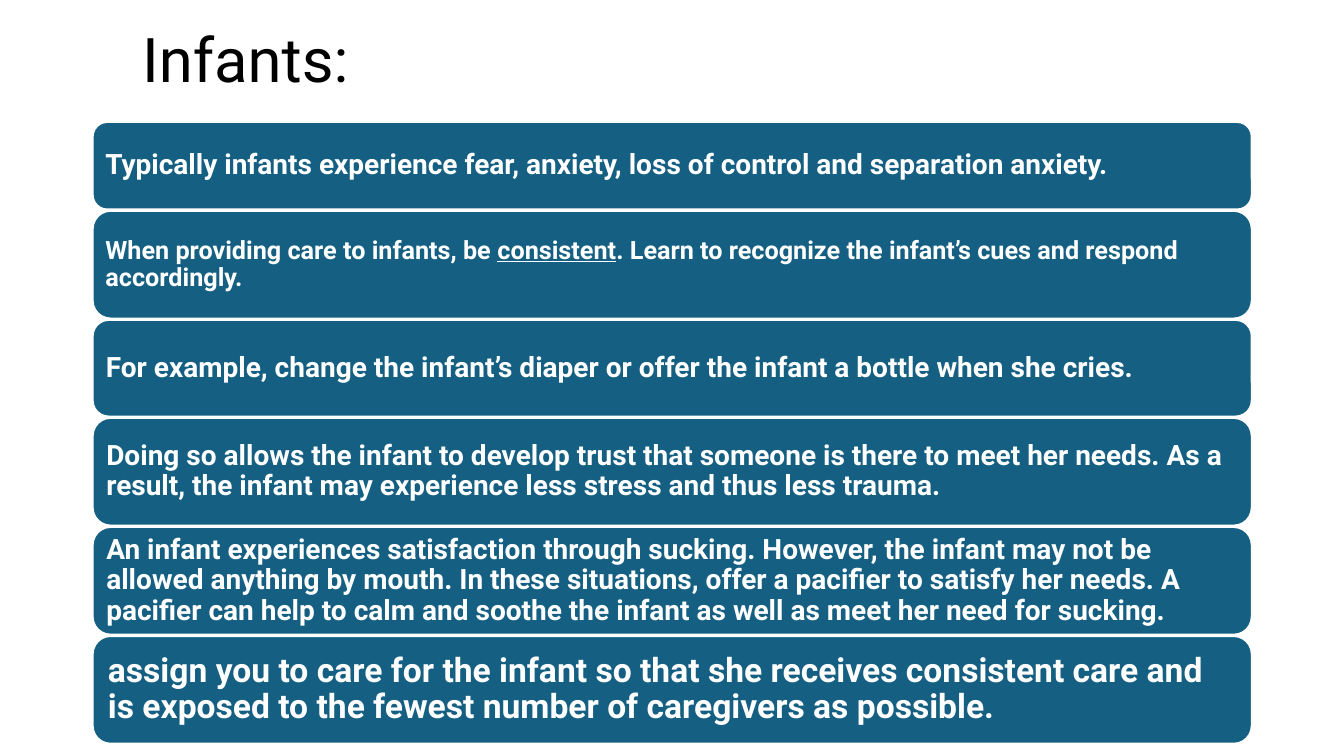
"""Build a slide on caring for infants: a title above a stack of rounded bars."""
from pptx import Presentation, util as u
from pptx.dml.color import RGBColor
from pptx.enum import shapes, text

TITLE = "Infants:"
BARS = [
    (62.6, 20, ["Typically infants experience fear, anxiety, loss of control and separation anxiety."]),
    (77, 18, ["When providing care to infants, be ", "consistent",
              ". Learn to recognize the infant’s cues and respond accordingly."]),
    (69.1, 20, ["For example, change the infant’s diaper or offer the infant a bottle when she cries."]),
    (77, 20, ["Doing so allows the infant to develop trust that someone is there to meet her needs. "
              "As a result, the infant may experience less stress and thus less trauma."]),
    (77, 20, ["An infant experiences satisfaction through sucking. However, the infant may not be "
              "allowed anything by mouth. In these situations, offer a pacifier to satisfy her needs. "
              "A pacifier can help to calm and soothe the infant as well as meet her need for sucking."]),
    (77, 24, ["assign you to care for the infant so that she receives consistent care and is exposed "
              "to the fewest number of caregivers as possible."]),
]
UNDERLINED = "consistent"
COLORS = {"title": "000000", "bar": "156082", "white": "FFFFFF"}
FONT = "Roboto"
BAR_LEFT, BAR_TOP, BAR_WIDTH, BAR_GAP = 66.2, 87.1, 828, 0.9
INSET_PER_POINT = 0.3


def color(name):
    return RGBColor.from_string(COLORS[name])


def fill_text(frame, parts, size, color_name, bold):
    frame.word_wrap = True
    frame.vertical_anchor = text.MSO_ANCHOR.MIDDLE
    paragraph = frame.paragraphs[0]
    paragraph.alignment = text.PP_ALIGN.LEFT
    paragraph.line_spacing = 0.9
    for part in parts:
        run = paragraph.add_run()
        run.text = part
        run.font.name = FONT
        run.font.size = u.Pt(size)
        run.font.bold = bold
        run.font.underline = part == UNDERLINED
        run.font.color.rgb = color(color_name)


def add_title(slide):
    title = slide.shapes.title
    title.left, title.top, title.width, title.height = map(u.Pt, (83.5, -7.2, 828, 104.4))
    title.text_frame.margin_left = u.Pt(18)
    fill_text(title.text_frame, [TITLE], 44, "title", False)


def add_bar(slide, top, height, size, parts):
    bar = slide.shapes.add_shape(shapes.MSO_SHAPE.ROUNDED_RECTANGLE,
                                 *map(u.Pt, (BAR_LEFT, top, BAR_WIDTH, height)))
    bar.shadow.inherit = False
    bar.fill.solid()
    bar.fill.fore_color.rgb = color("bar")
    bar.line.color.rgb = color("white")
    bar.line.width = u.Pt(1.5)
    frame = bar.text_frame
    inset = u.Pt(size * INSET_PER_POINT)
    frame.margin_left = frame.margin_right = frame.margin_top = frame.margin_bottom = inset
    fill_text(frame, parts, size, "white", True)


def main():
    presentation = Presentation()
    presentation.slide_width, presentation.slide_height = u.Pt(960), u.Pt(540)
    slide = presentation.slides.add_slide(presentation.slide_layouts[5])
    add_title(slide)
    top = BAR_TOP
    for height, size, parts in BARS:
        add_bar(slide, top, height, size, parts)
        top += height + BAR_GAP
    presentation.save("out.pptx")


if __name__ == "__main__":
    main()
